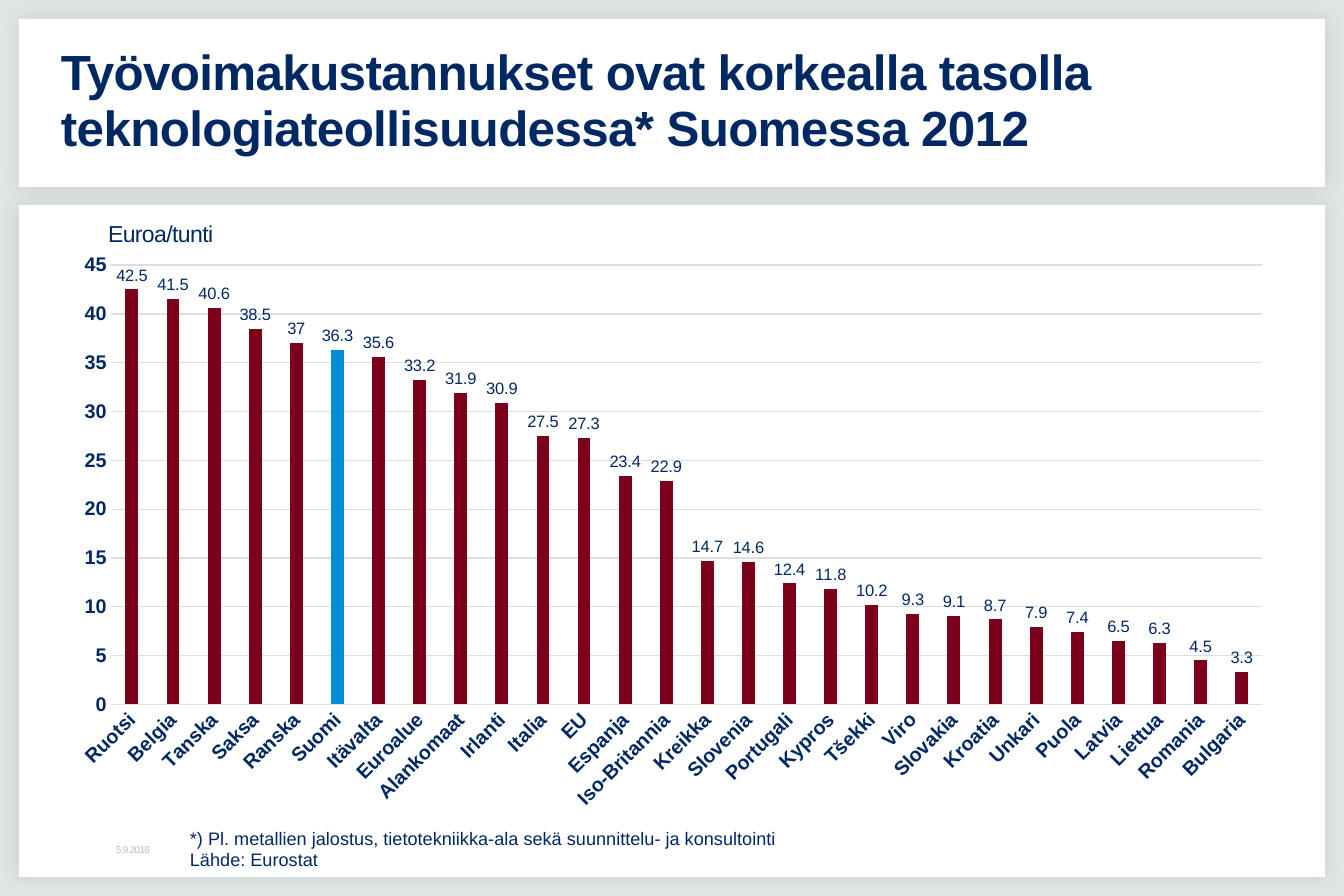
from lxml import etree
from pptx import Presentation
from pptx.chart.data import CategoryChartData
from pptx.dml.color import RGBColor
from pptx.enum.chart import XL_CHART_TYPE as CT, XL_LABEL_POSITION as LP, XL_TICK_MARK as TM
from pptx.enum.shapes import MSO_SHAPE
from pptx.enum.text import MSO_ANCHOR
from pptx.oxml import parse_xml
from pptx.oxml.ns import nsdecls, qn
from pptx.util import Pt

PX = 914400 / 118.5
FONT = "Arial"
NAVY, RED, BLUE, GRID = "002964", "7D001B", "008CD9", "DEDDE1"
HIGHLIGHT = "Suomi"
COSTS = {
    "Ruotsi": 42.5, "Belgia": 41.5, "Tanska": 40.6, "Saksa": 38.5,
    "Ranska": 37, "Suomi": 36.3, "Itävalta": 35.6, "Euroalue": 33.2,
    "Alankomaat": 31.9, "Irlanti": 30.9, "Italia": 27.5, "EU": 27.3,
    "Espanja": 23.4, "Iso-Britannia": 22.9, "Kreikka": 14.7, "Slovenia": 14.6,
    "Portugali": 12.4, "Kypros": 11.8, "Tšekki": 10.2, "Viro": 9.3,
    "Slovakia": 9.1, "Kroatia": 8.7, "Unkari": 7.9, "Puola": 7.4,
    "Latvia": 6.5, "Liettua": 6.3, "Romania": 4.5, "Bulgaria": 3.3,
}


def px(*lengths):
    return [round(n * PX) for n in lengths]


def rgb(color):
    return RGBColor.from_string(color)


def style_font(font, size, color, bold=False):
    font.name, font.size, font.bold = FONT, Pt(size), bold
    font.color.rgb = rgb(color)


def add_panel(s, *box):
    """White card with a soft glow-like shadow."""
    sp = s.shapes.add_shape(MSO_SHAPE.RECTANGLE, *px(*box))
    sp.fill.solid()
    sp.fill.fore_color.rgb = rgb("FFFFFF")
    sp.line.fill.background()
    sp.shadow.inherit = False
    effects = sp.element.spPr.find(qn("a:effectLst"))
    effects.append(parse_xml(
        f'<a:outerShdw {nsdecls("a")} blurRad="{Pt(10)}" dist="0" dir="2700000" '
        'algn="ctr" rotWithShape="0"><a:srgbClr val="000000">'
        '<a:alpha val="10000"/></a:srgbClr></a:outerShdw>'))


def add_text(s, box, text, size, color=NAVY, bold=False, insets=(5, 5, 5, 5),
             anchor=MSO_ANCHOR.TOP, spacing=None, tracking=None):
    tf = s.shapes.add_textbox(*px(*box)).text_frame
    tf.word_wrap = True
    tf.vertical_anchor = anchor
    tf.margin_left, tf.margin_top, tf.margin_right, tf.margin_bottom = px(*insets)
    tf.text = text
    for p in tf.paragraphs:
        if spacing:
            p.line_spacing = spacing
        for r in p.runs:
            style_font(r.font, size, color, bold)
            if tracking:
                r.font._element.set("spc", str(round(tracking * 100)))


def style_axis(axis):
    axis.major_tick_mark = axis.minor_tick_mark = TM.NONE
    style_font(axis.tick_labels.font, 12, NAVY, True)


def set_plot_area(chart, x, y, w, h):
    """Fix the inner plot area, in fractions of the chart."""
    plot_area = chart._chartSpace.chart.plotArea
    for old in plot_area.findall(qn("c:layout")):
        plot_area.remove(old)
    layout = etree.Element(qn("c:layout"))
    manual = etree.SubElement(layout, qn("c:manualLayout"))
    values = {"layoutTarget": "inner", "xMode": "edge", "yMode": "edge",
              "x": x, "y": y, "w": w, "h": h}
    for tag, value in values.items():
        etree.SubElement(manual, qn(f"c:{tag}")).set("val", str(value))
    plot_area.insert(0, layout)


def add_cost_chart(s, *box):
    data = CategoryChartData()
    data.categories = list(COSTS)
    data.add_series("Euroa/tunti", list(COSTS.values()))
    chart = s.shapes.add_chart(CT.COLUMN_CLUSTERED, *px(*box), data).chart
    chart.has_legend = chart.has_title = False
    style_font(chart.font, 10, "29282E")
    set_plot_area(chart, 0.045, 0.02, 0.935, 0.785)

    # Axes
    cat, val = chart.category_axis, chart.value_axis
    style_axis(cat)
    style_axis(val)
    cat.tick_labels.font._element.getparent().getparent().getparent().find(
        qn("a:bodyPr")).set("rot", "-2700000")
    val.minimum_scale, val.maximum_scale, val.major_unit = 0, 48, 5
    val.format.line.fill.background()
    for line in (cat.format.line, val.major_gridlines.format.line):
        line.color.rgb = rgb(GRID)
        line.width = Pt(0.75)

    # Columns and value labels
    plot = chart.plots[0]
    plot.gap_width, plot.overlap = 219, -27
    plot.vary_by_categories = False
    series = plot.series[0]
    series.invert_if_negative = False
    highlight = series.points[list(COSTS).index(HIGHLIGHT)]
    for item, color in ((series, RED), (highlight, BLUE)):
        item.format.fill.solid()
        item.format.fill.fore_color.rgb = rgb(color)
    labels = series.data_labels
    labels.show_value = True
    labels.position = LP.OUTSIDE_END
    style_font(labels.font, 10, NAVY)


def main():
    prs = Presentation()
    prs.slide_width, prs.slide_height = px(1344, 896)
    s = prs.slides.add_slide(prs.slide_layouts[6])
    s.background.fill.solid()
    s.background.fill.fore_color.rgb = rgb("E0E5E3")

    # Panels
    add_panel(s, 19, 19, 1306, 168)
    add_panel(s, 19, 205, 1306, 672)

    # Title
    add_text(s, (56, 37, 1232, 130),
             "Työvoimakustannukset ovat korkealla tasolla teknologiateollisuudessa* Suomessa 2012",
             30, bold=True, insets=(5, 6, 12, 6), anchor=MSO_ANCHOR.MIDDLE,
             spacing=0.95, tracking=-0.4)

    # Chart with its unit
    add_cost_chart(s, 56, 224, 1231, 597)
    add_text(s, (103, 214, 214, 38), "Euroa/tunti", 14, tracking=-0.4)

    # Footnote and date
    add_text(s, (178, 821, 933, 56),
             "*) Pl. metallien jalostus, tietotekniikka-ala sekä suunnittelu- ja konsultointi\n"
             "Lähde: Eurostat", 11, "002664", insets=(12, 6, 12, 6))
    add_text(s, (111, 840, 168, 19), "5.9.2016", 6, "B1BEB9",
             anchor=MSO_ANCHOR.MIDDLE, tracking=-0.4)

    prs.save("out.pptx")


if __name__ == "__main__":
    main()
